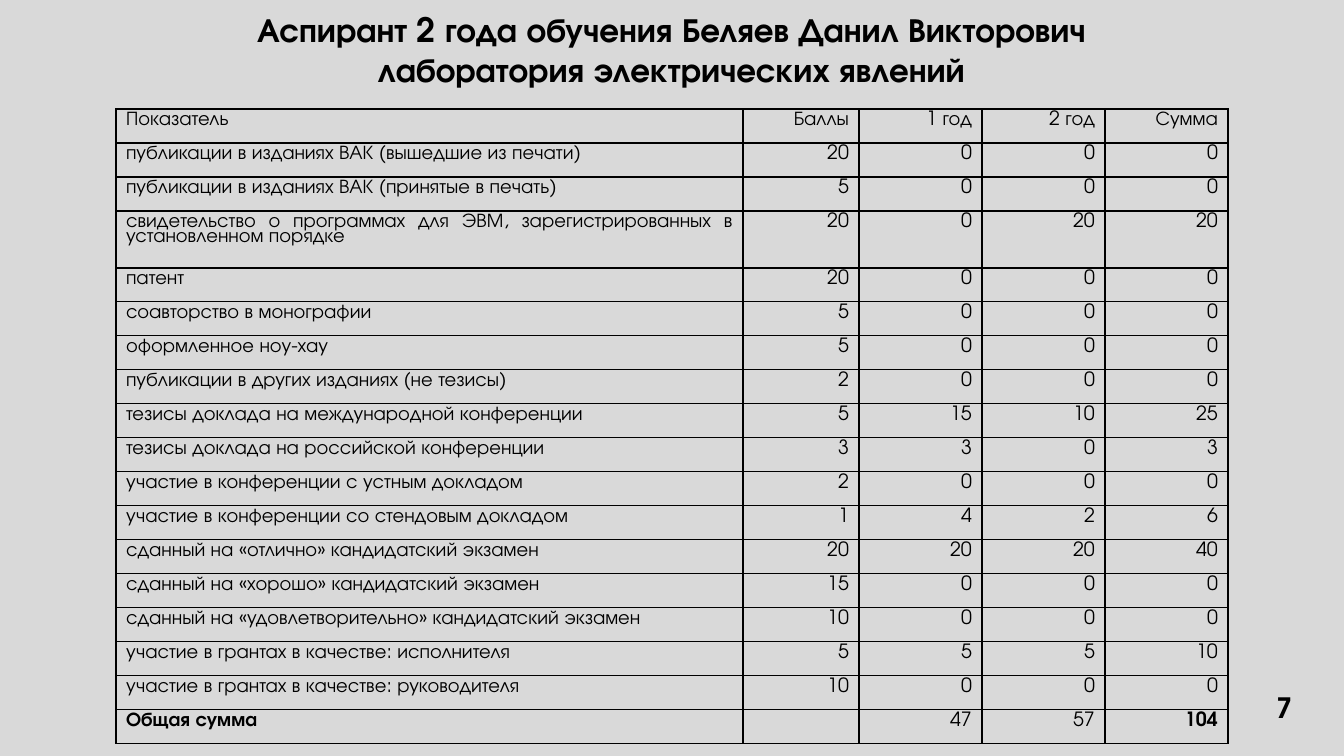
import pptx
import pptx.util
import pptx.dml.color
import pptx.enum.text
import lxml.etree

# Content
TITLE = ("Аспирант 2 года обучения Беляев Данил Викторович\v"
         "лаборатория электрических явлений")
PAGE = "7"
ROWS = [
    ("Показатель", "Баллы", "1 год", "2 год", "Сумма"),
    ("публикации в изданиях ВАК (вышедшие из печати)", 20, 0, 0, 0),
    ("публикации в изданиях ВАК (принятые в печать)", 5, 0, 0, 0),
    ("свидетельство о программах для ЭВМ, зарегистрированных в "
     "установленном порядке", 20, 0, 20, 20),
    ("патент", 20, 0, 0, 0),
    ("соавторство в монографии", 5, 0, 0, 0),
    ("оформленное ноу-хау", 5, 0, 0, 0),
    ("публикации в других изданиях (не тезисы)", 2, 0, 0, 0),
    ("тезисы доклада на международной конференции", 5, 15, 10, 25),
    ("тезисы доклада на российской конференции", 3, 3, 0, 3),
    ("участие в конференции с устным докладом", 2, 0, 0, 0),
    ("участие в конференции со стендовым докладом", 1, 4, 2, 6),
    ("сданный на «отлично» кандидатский экзамен", 20, 20, 20, 40),
    ("сданный на «хорошо» кандидатский экзамен", 15, 0, 0, 0),
    ("сданный на «удовлетворительно» кандидатский экзамен", 10, 0, 0, 0),
    ("участие в грантах в качестве: исполнителя", 5, 5, 5, 10),
    ("участие в грантах в качестве: руководителя", 10, 0, 0, 0),
    ("Общая сумма", "", 47, 57, 104),
]
LAST = len(ROWS) - 1
WIDTHS = [627, 116, 123, 123, 123]
HEIGHTS = [34] * len(ROWS)
HEIGHTS[3] = 57
HEIGHTS[LAST] = 28

FONT = "TeX Gyre Adventor"
BLACK = pptx.dml.color.RGBColor(0x00, 0x00, 0x00)
GREY = pptx.dml.color.RGBColor(0xD9, 0xD9, 0xD9)
ALIGN = pptx.enum.text.PP_ALIGN
MIDDLE = pptx.enum.text.MSO_ANCHOR.MIDDLE
SCALE = 914400 / 100.8
NS = "http://schemas.openxmlformats.org/drawingml/2006/main"


def px(size):
    return pptx.util.Emu(round(size * SCALE))


def style(para, size, bold, align):
    para.alignment = align
    for run in para.runs:
        run.font.name = FONT
        run.font.size = pptx.util.Pt(size)
        run.font.bold = bold
        run.font.color.rgb = BLACK


def label(slide, text, box, size, align, anchor=None):
    frame = slide.shapes.add_textbox(*map(px, box)).text_frame
    frame.word_wrap = True
    frame.vertical_anchor = anchor
    para = frame.paragraphs[0]
    para.text = text
    style(para, size, True, align)


def border(cell):
    props = cell._tc.get_or_add_tcPr()
    for side in ("lnL", "lnR", "lnT", "lnB"):
        line = lxml.etree.SubElement(props, f"{{{NS}}}{side}", w="12700")
        fill = lxml.etree.SubElement(line, f"{{{NS}}}solidFill")
        lxml.etree.SubElement(fill, f"{{{NS}}}srgbClr", val=str(BLACK))


# Slide
deck = pptx.Presentation()
deck.slide_width, deck.slide_height = px(1344), px(756)
slide = deck.slides.add_slide(deck.slide_layouts[6])
slide.background.fill.solid()
slide.background.fill.fore_color.rgb = GREY

# Score table
box = (116, 109, sum(WIDTHS), sum(HEIGHTS))
table = slide.shapes.add_table(len(ROWS), len(WIDTHS), *map(px, box)).table
table.first_row = table.horz_banding = False
for col, width in zip(table.columns, WIDTHS):
    col.width = px(width)
for r, (values, height) in enumerate(zip(ROWS, HEIGHTS)):
    table.rows[r].height = px(height)
    for c, value in enumerate(values):
        cell = table.cell(r, c)
        border(cell)
        cell.fill.background()
        para = cell.text_frame.paragraphs[0]
        para.line_spacing = 0.8
        if value == "":
            para._p.get_or_add_endParaRPr().set("sz", "1400")
            continue
        para.text = str(value)
        style(para, 14, r == LAST and c in (0, 4),
              ALIGN.RIGHT if c else ALIGN.JUSTIFY)

# Page number and title
label(slide, PAGE, (1253, 686, 49, 52), 20, ALIGN.RIGHT)
label(slide, TITLE, (140, 13, 1063, 72), 24, ALIGN.CENTER, MIDDLE)

deck.save("out.pptx")
